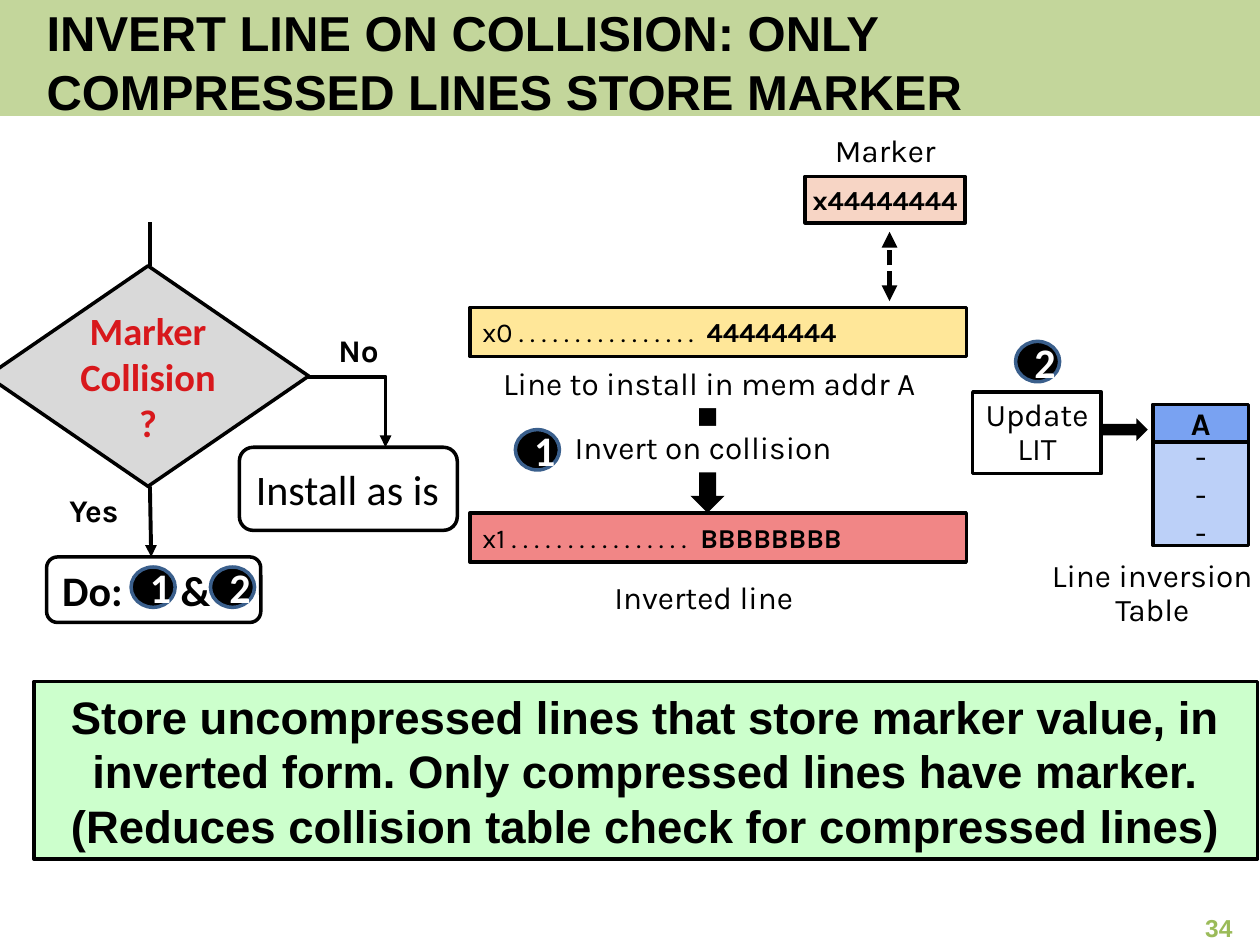
from dataclasses import dataclass

from lxml import etree
from pptx import Presentation
from pptx.dml.color import RGBColor
from pptx.enum.dml import MSO_LINE
from pptx.enum.shapes import MSO_CONNECTOR, MSO_SHAPE
from pptx.enum.text import MSO_ANCHOR, MSO_AUTO_SIZE, PP_ALIGN
from pptx.oxml.ns import qn
from pptx.util import Pt

PX = 9144
RECT, ROUND, OVAL = MSO_SHAPE.RECTANGLE, MSO_SHAPE.ROUNDED_RECTANGLE, MSO_SHAPE.OVAL
DIAMOND, ARROW = MSO_SHAPE.DIAMOND, MSO_SHAPE.RIGHT_ARROW
STRAIGHT, ELBOW = MSO_CONNECTOR.STRAIGHT, MSO_CONNECTOR.ELBOW
LEFT, CENTER, RIGHT = PP_ALIGN.LEFT, PP_ALIGN.CENTER, PP_ALIGN.RIGHT
MIDDLE, NO_FIT, SYS_DASH = MSO_ANCHOR.MIDDLE, MSO_AUTO_SIZE.NONE, MSO_LINE.SQUARE_DOT


@dataclass(frozen=True)
class Style:
    font: str
    size: float
    color: str = "000000"
    bold: bool = False


@dataclass(frozen=True)
class Theme:
    black: str = "000000"
    white: str = "FFFFFF"
    band: str = "C3D69B"
    marker: str = "F7D5C5"
    install: str = "FFE799"
    inverted: str = "F18686"
    table_head: str = "79A2F2"
    table_body: str = "BCD0F8"
    decision: str = "D9D9D9"
    badge_line: str = "3A5F8C"
    takeaway: str = "CCFFCC"
    title: Style = Style("Arial", 28, bold=True)
    number: Style = Style("Arial", 14, "9BBB59", True)
    summary: Style = Style("Arial", 26, bold=True)
    label: Style = Style("Karla", 18)
    strong: Style = Style("Karla", 18, bold=True)
    data: Style = Style("Karla", 15.6)
    value: Style = Style("Karla", 15.6, bold=True)
    question: Style = Style("Calibri", 22, "D8181C", True)
    step: Style = Style("Calibri", 24)
    action: Style = Style("Calibri", 24, bold=True)
    badge: Style = Style("Calibri", 24, "FFFFFF", True)


T = Theme()


@dataclass(frozen=True)
class Region:
    s: object
    x: int
    y: int

    def place(self, x, y, *size):
        return [v * PX for v in (self.x + x, self.y + y, *size)]


def write(tf, paragraphs, align=CENTER, spacing=None, tab=None):
    tf.word_wrap = True
    tf.vertical_anchor = MIDDLE
    for i, runs in enumerate(paragraphs):
        p = tf.add_paragraph() if i else tf.paragraphs[0]
        p.alignment = align
        if spacing:
            p.line_spacing = spacing
        if tab:
            tabs = etree.SubElement(p._p.get_or_add_pPr(), qn("a:tabLst"))
            etree.SubElement(tabs, qn("a:tab"), pos=str(tab * PX), algn="l")
        for text, style in runs:
            r = p.add_run()
            r.text = text
            r.font.name = style.font
            r.font.size = Pt(style.size)
            r.font.bold = style.bold
            r.font.color.rgb = RGBColor.from_string(style.color)


def add_box(region, kind, box, fill, line=None, paragraphs=(), **layout):
    sp = region.s.shapes.add_shape(kind, *region.place(*box))
    sp.shadow.inherit = False
    sp.fill.solid()
    sp.fill.fore_color.rgb = RGBColor.from_string(fill)
    if line:
        sp.line.color.rgb = RGBColor.from_string(line)
        sp.line.width = Pt(2)
    else:
        sp.line.fill.background()
    write(sp.text_frame, paragraphs, **layout)
    return sp


def add_label(region, box, *lines, style=T.label, align=CENTER, wrap=True):
    sp = region.s.shapes.add_textbox(*region.place(*box))
    write(sp.text_frame, [[(line, style)] for line in lines], align, 0.9)
    sp.text_frame.word_wrap = wrap


def add_badge(region, x, y, text):
    add_box(region, OVAL, (x, y, 35, 32), T.black, T.badge_line, [[(text, T.badge)]])


def add_line(region, start, end, ends=(), kind=STRAIGHT, width=2.25, dash=None):
    c = region.s.shapes.add_connector(kind, *region.place(*start), *region.place(*end))
    c.line.color.rgb = RGBColor.from_string(T.black)
    c.line.width = Pt(width)
    if dash:
        c.line.dash_style = dash
    for name in ends:
        etree.SubElement(c.line._get_or_add_ln(), qn(f"a:{name}"), type="triangle")
    spPr = c._element.spPr
    etree.SubElement(spPr, qn("a:effectLst"))
    if kind == ELBOW:
        spPr.find(qn("a:prstGeom")).set("prst", "bentConnector2")


def add_data_bar(region, box, fill, prefix, value, tab):
    sp = add_box(region, RECT, box, fill, T.black,
                 [[(prefix + "\t", T.data), (value, T.value)]], align=LEFT, tab=tab)
    sp.text_frame.margin_right = 0


def header(region):
    add_box(region, RECT, (0, 0, 1000, 92), T.band)
    title = region.s.shapes.title
    title.left, title.top, title.width, title.height = region.place(27, 22, 917, 53)
    write(title.text_frame,
          [[("INVERT LINE ON COLLISION: ONLY COMPRESSED LINES STORE MARKER", T.title)]], LEFT)
    title.text_frame.auto_size = NO_FIT
    region.s.shapes._spTree.append(title._element)


def line_inversion(region):
    add_label(region, (275, 0, 109, 37), "Marker")
    marker = add_box(region, RECT, (266, 38, 127, 37), T.marker, T.black,
                     [[("x44444444", T.value)]])
    marker.text_frame.margin_left = marker.text_frame.margin_right = 0
    add_line(region, (333, 137), (333, 82), ("headEnd", "tailEnd"), width=3, dash=SYS_DASH)
    add_data_bar(region, (0, 142, 394, 39), T.install,
                 "x0 . . . . . . . . . . . . . . . .", "44444444", 178)
    add_data_bar(region, (0, 305, 394, 39), T.inverted,
                 "x1 . . . . . . . . . . . . . . . .", "BBBBBBBB", 173)
    add_label(region, (87, 355, 197, 37), "Inverted line")
    arrow = add_box(region, ARROW, (130, 233, 117, 27), T.black)
    arrow.rotation = 90
    for box, text in (((64, 236, 242, 37), "Invert on collision"),
                      ((7, 185, 366, 37), "Line to install in mem addr A")):
        add_box(region, RECT, box, T.white, None, [[(text, T.label)]], spacing=0.9)
    add_badge(region, 36, 239, "1")


def inversion_table(region):
    add_badge(region, 34, 0, "2")
    add_box(region, RECT, (0, 40, 102, 65), T.white, T.black,
            [[("Update", T.label)], [("LIT", T.label)]], spacing=0.9)
    add_box(region, ARROW, (102, 61, 37, 18), T.black)
    add_box(region, RECT, (143, 80, 76, 82), T.table_body, T.black, [[("-", T.label)]] * 3)
    add_box(region, RECT, (143, 50, 76, 30), T.table_head, T.black, [[("A", T.strong)]])
    add_label(region, (50, 168, 185, 65), "Line inversion", "Table", wrap=False)


def collision_flow(region):
    add_box(region, DIAMOND, (0, 35, 255, 175), T.decision, T.black,
            [[("Marker Collision ?", T.question)]])
    add_box(region, ROUND, (47, 266, 170, 52), T.white, T.black,
            [[("Do:\t&", T.action)]], align=LEFT, tab=94)
    add_badge(region, 114, 274, "1")
    add_badge(region, 177, 274, "2")
    add_line(region, (129, 35), (129, 0))
    add_line(region, (129, 210), (130, 266), ("tailEnd",))
    add_box(region, ROUND, (200, 179, 173, 66), T.white, T.black,
            [[("Install as is", T.step)]], align=LEFT)
    add_line(region, (253, 123), (316, 179), ("tailEnd",), ELBOW)
    add_label(region, (30, 212, 109, 37), "Yes", style=T.strong)
    add_label(region, (240, 85, 109, 37), "No", style=T.strong)


def footer(region):
    add_box(region, RECT, (0, 0, 971, 141), T.takeaway, T.black, [
        [("Store uncompressed lines that store marker value, in inverted form. "
          "Only compressed lines have marker.", T.summary)],
        [("(Reduces collision table check for compressed lines)", T.summary)]])
    add_label(region, (728, 184, 233, 26), "34", style=T.number, align=RIGHT)


def main():
    prs = Presentation()
    prs.slide_width, prs.slide_height = 1000 * PX, 750 * PX
    s = prs.slides.add_slide(prs.slide_layouts[5])
    header(Region(s, 0, 0))
    line_inversion(Region(s, 373, 102))
    inversion_table(Region(s, 772, 271))
    collision_flow(Region(s, -10, 176))
    footer(Region(s, 27, 541))
    prs.save("out.pptx")


if __name__ == "__main__":
    main()
